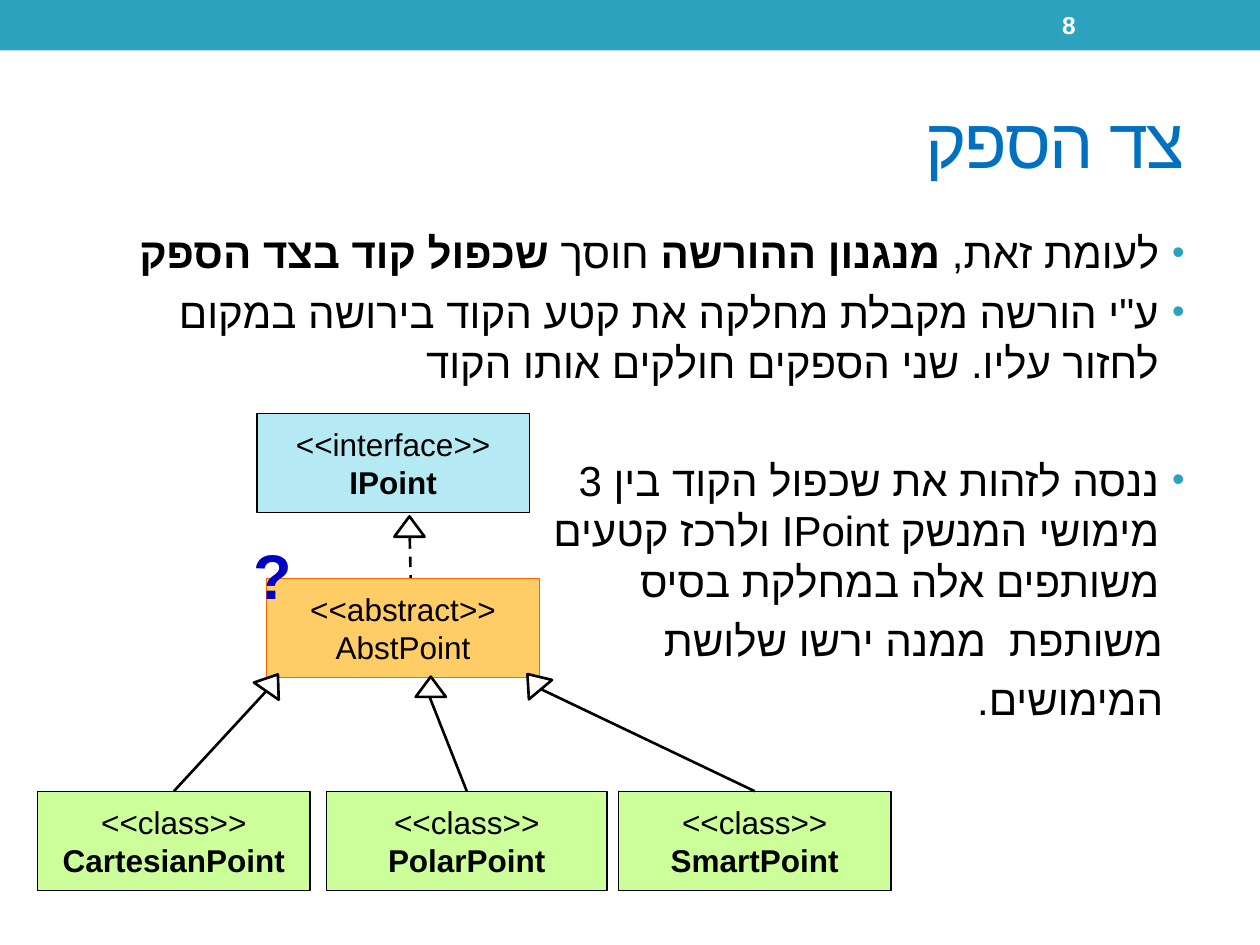
from pptx import Presentation
from pptx.dml.color import RGBColor
from pptx.enum.dml import MSO_LINE
from pptx.enum.shapes import MSO_CONNECTOR, MSO_SHAPE
from pptx.enum.text import MSO_ANCHOR, PP_ALIGN
from pptx.oxml.ns import qn
from pptx.util import Cm, Pt
from lxml import etree

RECT = MSO_SHAPE.RECTANGLE
BOX = MSO_SHAPE.FLOWCHART_PROCESS
TIP = MSO_SHAPE.FLOWCHART_EXTRACT
LINE = MSO_CONNECTOR.STRAIGHT
DASH = MSO_LINE.DASH
LEFT, MID, RIGHT = PP_ALIGN.LEFT, PP_ALIGN.CENTER, PP_ALIGN.RIGHT
TOP, HALF = MSO_ANCHOR.TOP, MSO_ANCHOR.MIDDLE

FONT = "Arial"
TEAL, BLACK, WHITE = "2DA2BF", "000000", "FFFFFF"
BLUE, NAVY = "0070C0", "0000C0"
SKY, GOLD, RUST, LIME = "B5E9F4", "FFCC66", "FF6600", "CCFF99"

TITLE = "צד הספק"
PAGE = "8"
# bullet, space before, runs (text, bold)
BODY = [
    (True, 5, [("לעומת זאת, ", False), ("מנגנון ההורשה", True),
               (" חוסך ", False), ("שכפול קוד בצד הספק", True)]),
    (True, 5, [('ע"י הורשה מקבלת מחלקה את קטע הקוד בירושה במקום לחזור עליו. '
                "שני הספקים חולקים אותו הקוד", False)]),
    (True, 38.5, [("ננסה לזהות את שכפול הקוד בין 3\n"
                   "מימושי המנשק IPoint ולרכז קטעים\n"
                   "משותפים אלה במחלקת בסיס", False)]),
    (False, 5, [("משותפת  ממנה ירשו שלושת", False)]),
    (False, 5, [("המימושים.", False)]),
]
FACE = ("<<interface>>", "IPoint", True, 5.18, 8.33, 5.49, SKY, BLACK)
BASE = ("<<abstract>>", "AbstPoint", False, 5.38, 11.66, 5.49, GOLD, RUST)
# name, left, width, line end, tip corner, tip turn
KIDS = [
    ("CartesianPoint", 0.76, 5.49, (5.36, 13.94), (5.18, 13.56), 34.7),
    ("PolarPoint", 6.58, 5.66, (8.66, 14.05), (8.38, 13.64), 0),
    ("SmartPoint", 12.47, 5.49, (10.9, 13.89), (10.46, 13.54), 320),
]
ROW, HIGH = 15.95, 2


def tint(code):
    return RGBColor.from_string(code)


def write(par, runs, size, color, align):
    par.alignment = align
    par._p.get_or_add_pPr().set("rtl", "1")
    for text, bold in runs:
        for n, part in enumerate(text.split("\n")):
            if n:
                par.add_line_break()
            run = par.add_run()
            run.text = part
            font = run.font
            font.name, font.size, font.bold = FONT, Pt(size), bold
            font.color.rgb = tint(color)
            etree.SubElement(run._r.rPr, qn("a:cs"), typeface=FONT)


def label(area, runs, size, color, align, anchor=HALF, wrap=True):
    frame = slide.shapes.add_textbox(*map(Cm, area)).text_frame
    frame.word_wrap, frame.vertical_anchor = wrap, anchor
    if runs:
        write(frame.paragraphs[0], runs, size, color, align)
    return frame


def shape(kind, area, fill, edge=None, width=0.75):
    item = slide.shapes.add_shape(kind, *map(Cm, area))
    item.shadow.inherit = False
    item.fill.solid()
    item.fill.fore_color.rgb = tint(fill)
    if edge:
        item.line.color.rgb = tint(edge)
        item.line.width = Pt(width)
    else:
        item.line.fill.background()
    return item


def box(kind, name, bold, left, top, wide, fill, edge):
    item = shape(BOX, (left, top, wide, HIGH), fill, edge)
    frame = item.text_frame
    frame.word_wrap, frame.vertical_anchor = False, HALF
    write(frame.paragraphs[0], [(kind, False)], 18, BLACK, MID)
    write(frame.add_paragraph(), [(name, bold)], 18, BLACK, MID)
    return item


def tip(spot, turn=0):
    shape(TIP, (*spot, 0.61, 0.41), WHITE, BLACK, 1.5).rotation = turn


def link(start, end):
    item = slide.shapes.add_connector(LINE, *map(Cm, (*start, *end)))
    item.line.color.rgb = tint(BLACK)
    item.line.width = Pt(1.5)
    etree.SubElement(item._element.spPr, qn("a:effectLst"))
    return item


def indent(par, bullet):
    props = par._p.get_or_add_pPr()
    props.set("marL", str(Cm(0.51 if bullet else 0.43)))
    props.set("indent", str(Cm(-0.51 if bullet else 0)))
    if bullet:
        hue = etree.SubElement(props, qn("a:buClr"))
        etree.SubElement(hue, qn("a:srgbClr"), val=TEAL)
        etree.SubElement(props, qn("a:buSzPct"), val="85000")
        etree.SubElement(props, qn("a:buFont"), typeface=FONT)
        etree.SubElement(props, qn("a:buChar"), char="•")


deck = Presentation()
deck.slide_width, deck.slide_height = Cm(25.4), Cm(19.05)
slide = deck.slides.add_slide(deck.slide_layouts[6])

shape(RECT, (0, 0, 25.4, 1.02), TEAL)
head = label((1.27, 1.47, 22.86, 2.74), [(TITLE, False)], 40, BLUE, RIGHT)
head.paragraphs[0].runs[0]._r.rPr.set("spc", "-100")

body = label((1.27, 4.45, 22.86, 13.54), [], 24, BLACK, RIGHT, TOP)
for n, (bullet, gap, runs) in enumerate(BODY):
    par = body.add_paragraph() if n else body.paragraphs[0]
    write(par, runs, 24, BLACK, RIGHT)
    par.space_before = Pt(gap)
    indent(par, bullet)

label((21.16, 0.05, 2.97, 0.91), [(PAGE, True)], 14, WHITE, LEFT)

box(*FACE)
link((8.26, 10.85), (8.28, 11.71)).line.dash_style = DASH
tip((7.95, 10.41))
box(*BASE)
for name, left, wide, end, spot, turn in KIDS:
    kid = box("<<class>>", name, True, left, ROW, wide, LIME, BLACK)
    link((left + wide / 2, ROW), end).begin_connect(kid, 0)
    tip(spot, turn)
label((4.85, 10.69, 1.3, 1.78), [("?", True)], 36, NAVY, MID, TOP, False)

deck.save("out.pptx")
